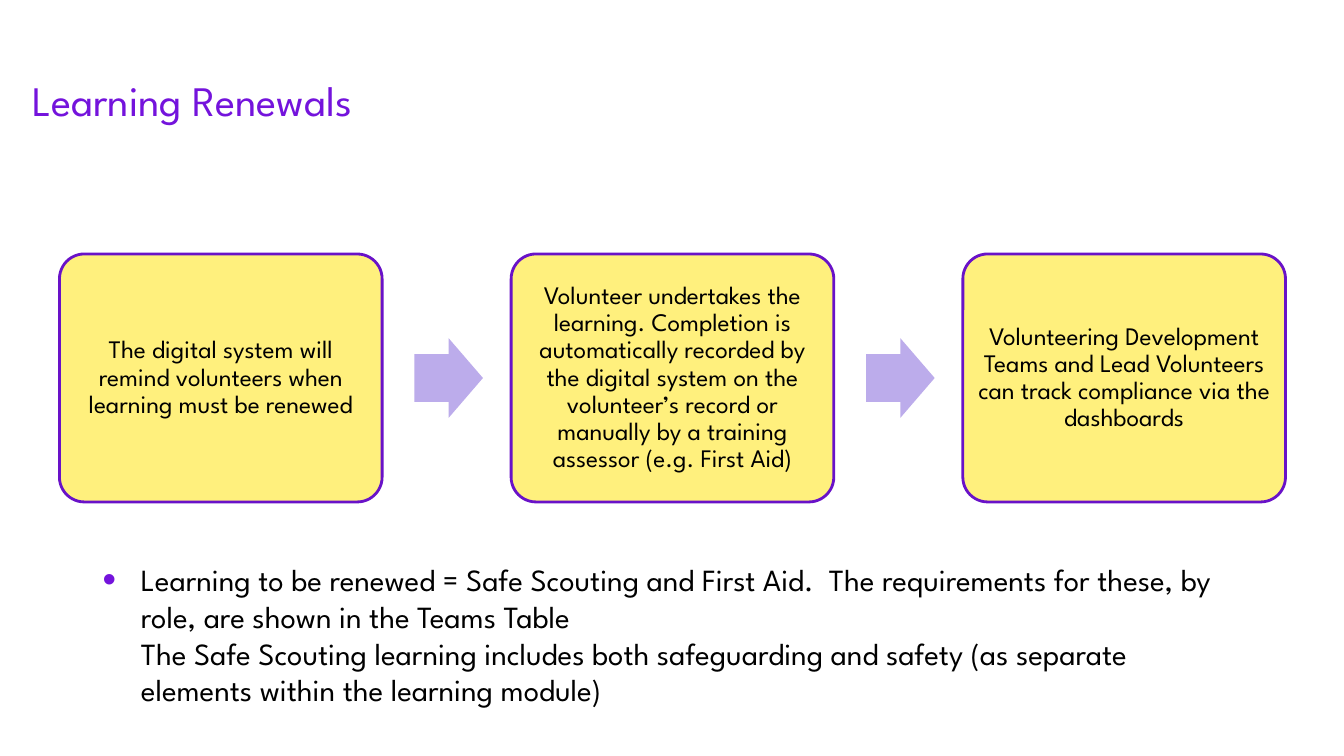
"""Build the Learning Renewals slide: three linked steps and a note."""
from lxml import etree
from pptx import Presentation, util as u
from pptx.dml.color import RGBColor
from pptx.enum import shapes, text
from pptx.oxml.ns import qn

PURPLE = RGBColor(0x74, 0x13, 0xDC)
OUTLINE = RGBColor(0x69, 0x12, 0xC8)
YELLOW = RGBColor(0xFF, 0xF0, 0x7D)
LILAC = RGBColor(0xBC, 0xAC, 0xEB)
BLACK = RGBColor(0, 0, 0)
FONT = "League Spartan"

HEADING = "Learning Renewals"
STEPS = [
    "The digital system will remind volunteers when learning must be renewed",
    "Volunteer undertakes the learning. Completion is automatically recorded by "
    "the digital system on the volunteer’s record or manually by a training "
    "assessor (e.g. First Aid)",
    "Volunteering Development Teams and Lead Volunteers can track compliance "
    "via the dashboards",
]
RENEWAL_NOTE = (
    "Learning to be renewed = Safe Scouting and First Aid.  The requirements "
    "for these, by role, are shown in the Teams Table\n"
    "The Safe Scouting learning includes both safeguarding and safety "
    "(as separate elements within the learning module)"
)
BULLET = [
    ("a:buClr", {}),
    ("a:buSzPct", {"val": "125000"}),
    ("a:buFont", {"typeface": "Arial"}),
    ("a:buChar", {"char": "•"}),
]

SLIDE_W, SLIDE_H = 13.33, 7.5
STEP_LEFT, STEP_TOP, STEP_W, STEP_H = 0.59, 2.52, 3.2, 2.46
STEP_PITCH = 1.4 * STEP_W
ARROW_W, ARROW_H = 0.68, 0.79
ARROW_OFFSET = 1.1 * STEP_W
ARROW_TOP = STEP_TOP + (STEP_H - ARROW_H) / 2


def inches(*lengths):
    return [u.Inches(length) for length in lengths]


def apply(target, formats):
    for name, value in formats.items():
        setattr(target, name, value)


def write(frame, words, size, color, margins, paragraph_format):
    sides = ("margin_left", "margin_top", "margin_right", "margin_bottom")
    apply(frame, dict(zip(sides, inches(*margins)), word_wrap=True))
    paragraph = frame.paragraphs[0]
    paragraph.text = words
    apply(paragraph, paragraph_format)
    for run in paragraph.runs:
        apply(run.font, {"size": u.Pt(size), "name": FONT})
        run.font.color.rgb = color
    return paragraph


def add_block(slide, kind, box, fill, adjustments):
    block = slide.shapes.add_shape(kind, *inches(*box))
    block.shadow.inherit = False
    block.fill.solid()
    block.fill.fore_color.rgb = fill
    block.line.fill.background()
    for index, share in enumerate(adjustments):
        block.adjustments[index] = share
    return block


def add_step(slide, left, words):
    step = add_block(slide, shapes.MSO_SHAPE.ROUNDED_RECTANGLE,
                     (left, STEP_TOP, STEP_W, STEP_H), YELLOW, [0.1])
    step.line.color.rgb = OUTLINE
    step.line.width = u.Pt(2)
    step.text_frame.vertical_anchor = text.MSO_ANCHOR.MIDDLE
    write(step.text_frame, words, 18, BLACK, [0.07] * 4,
          {"alignment": text.PP_ALIGN.CENTER, "line_spacing": 0.9})


def add_note(slide):
    note = slide.shapes.add_textbox(*inches(0.91, 5.51, 11.5, 1.58))
    paragraph = note.text_frame.paragraphs[0]
    properties = paragraph._p.get_or_add_pPr()
    properties.set("marL", str(u.Inches(0.39)))
    properties.set("indent", str(u.Inches(-0.38)))
    for tag, attributes in BULLET:
        part = etree.SubElement(properties, qn(tag), attributes)
        if tag == "a:buClr":
            etree.SubElement(part, qn("a:srgbClr"), {"val": str(PURPLE)})
    write(note.text_frame, RENEWAL_NOTE, 22, BLACK, (0.1, 0.05, 0.1, 0.05),
          {"space_after": u.Pt(6)})


def main():
    deck = Presentation()
    apply(deck, {"slide_width": u.Inches(SLIDE_W), "slide_height": u.Inches(SLIDE_H)})
    slide = deck.slides.add_slide(deck.slide_layouts[6])
    heading = slide.shapes.add_textbox(*inches(0.32, 0.74, 7.8, 0.5))
    write(heading.text_frame, HEADING, 30, PURPLE, [0] * 4, {})
    for index, words in enumerate(STEPS):
        left = STEP_LEFT + index * STEP_PITCH
        add_step(slide, left, words)
        if index < len(STEPS) - 1:
            add_block(slide, shapes.MSO_SHAPE.RIGHT_ARROW,
                      (left + ARROW_OFFSET, ARROW_TOP, ARROW_W, ARROW_H),
                      LILAC, [0.6, 0.5])
    add_note(slide)
    deck.save("out.pptx")


if __name__ == "__main__":
    main()
